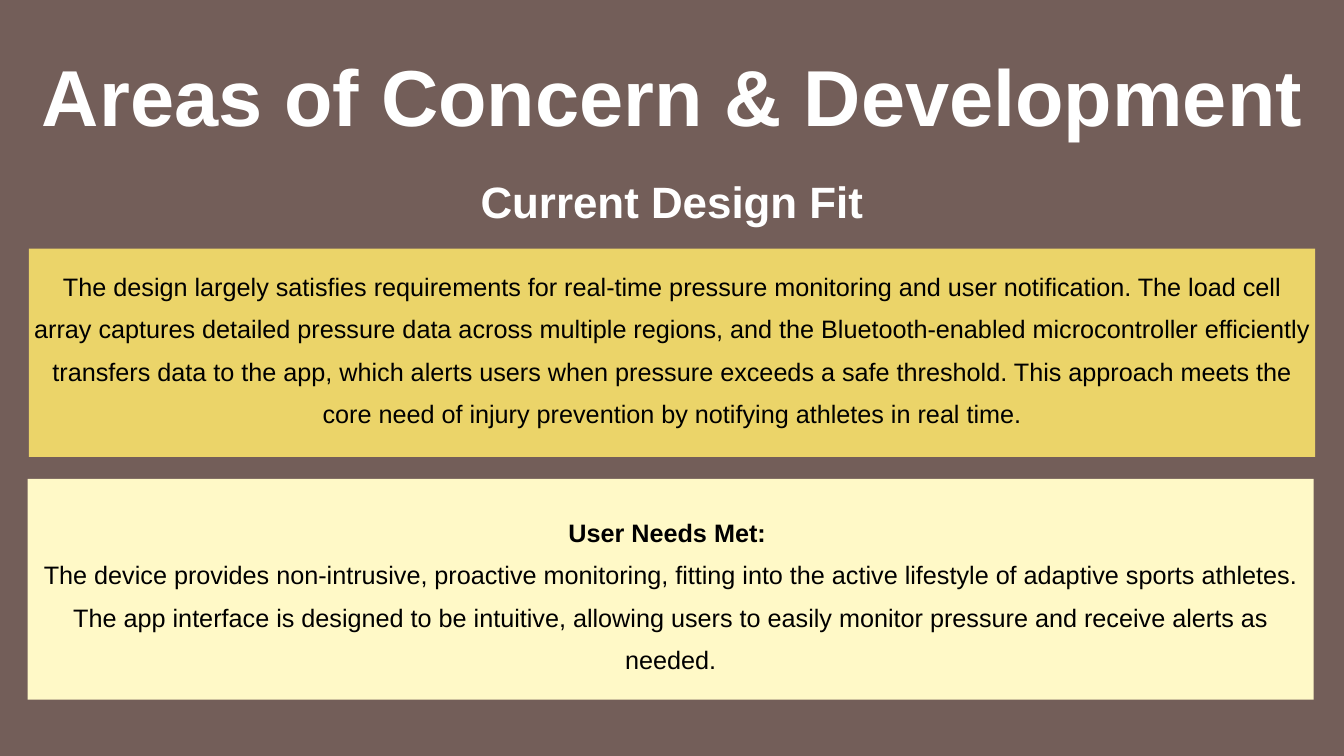
import pptx
import pptx.dml.color
import pptx.enum.shapes
import pptx.enum.text
import pptx.util

Pt = pptx.util.Pt
HUES = {
    "back": "735E59",
    "gold": "EBD469",
    "cream": "FFF9C7",
    "white": "FFFFFF",
    "black": "000000",
}
FIT = (
    "The design largely satisfies requirements for real-time pressure monitoring "
    "and user notification. The load cell array captures detailed pressure data "
    "across multiple regions, and the Bluetooth-enabled microcontroller efficiently "
    "transfers data to the app, which alerts users when pressure exceeds a safe "
    "threshold. This approach meets the core need of injury prevention by notifying "
    "athletes in real time."
)
NEEDS = (
    "The device provides non-intrusive, proactive monitoring, fitting into the "
    "active lifestyle of adaptive sports athletes. The app interface is designed "
    "to be intuitive, allowing users to easily monitor pressure and receive alerts "
    "as needed."
)


class Deck:
    """Hold the style and the current slide."""

    face = "Arial"

    def __init__(self, wide, high):
        self.show = pptx.Presentation()
        self.show.slide_width, self.show.slide_height = Pt(wide), Pt(high)
        self.slide = self.show.slides.add_slide(self.show.slide_layouts[6])
        self.paint(self.slide.background.fill, "back")

    def paint(self, fill, hue):
        fill.solid()
        fill.fore_color.rgb = pptx.dml.color.RGBColor.from_string(HUES[hue])

    def panel(self, box, hue):
        kind = pptx.enum.shapes.MSO_SHAPE.RECTANGLE
        shape = self.slide.shapes.add_shape(kind, *map(Pt, box))
        shape.shadow.inherit = False
        shape.line.fill.background()
        self.paint(shape.fill, hue)

    def text(self, box, lines, size, hue, space=1.4, inset=0, middle=False):
        frame = self.slide.shapes.add_textbox(*map(Pt, box)).text_frame
        frame.word_wrap = True
        frame.margin_left = frame.margin_right = Pt(inset)
        frame.margin_top = frame.margin_bottom = Pt(inset)
        anchor = pptx.enum.text.MSO_ANCHOR
        frame.vertical_anchor = anchor.MIDDLE if middle else anchor.TOP
        frame.text = "\n".join(words for words, bold in lines)
        for para, (words, bold) in zip(frame.paragraphs, lines):
            para.alignment = pptx.enum.text.PP_ALIGN.CENTER
            para.line_spacing = space
            para.font.name = self.face
            para.font.size = Pt(size)
            para.font.bold = bold
            self.paint(para.font.fill, hue)

    def body(self, box, lines):
        self.text(box, lines, 27, "black", inset=4, middle=True)


def main():
    deck = Deck(1440, 810)
    deck.panel((31, 266.5, 1378, 223), "gold")
    deck.body((31, 270, 1378, 197), [(FIT, False)])
    deck.text((-24, 30, 1488, 102), [("Areas of Concern & Development", True)],
              85, "white", space=1.2)
    deck.text((235, 164, 970, 63), [("Current Design Fit", True)], 47, "white")
    deck.panel((29.5, 513, 1378, 236.5), "cream")
    deck.body((29.5, 527, 1378, 210), [("User Needs Met: ", True), (NEEDS, False)])
    deck.show.save("out.pptx")


if __name__ == "__main__":
    main()
